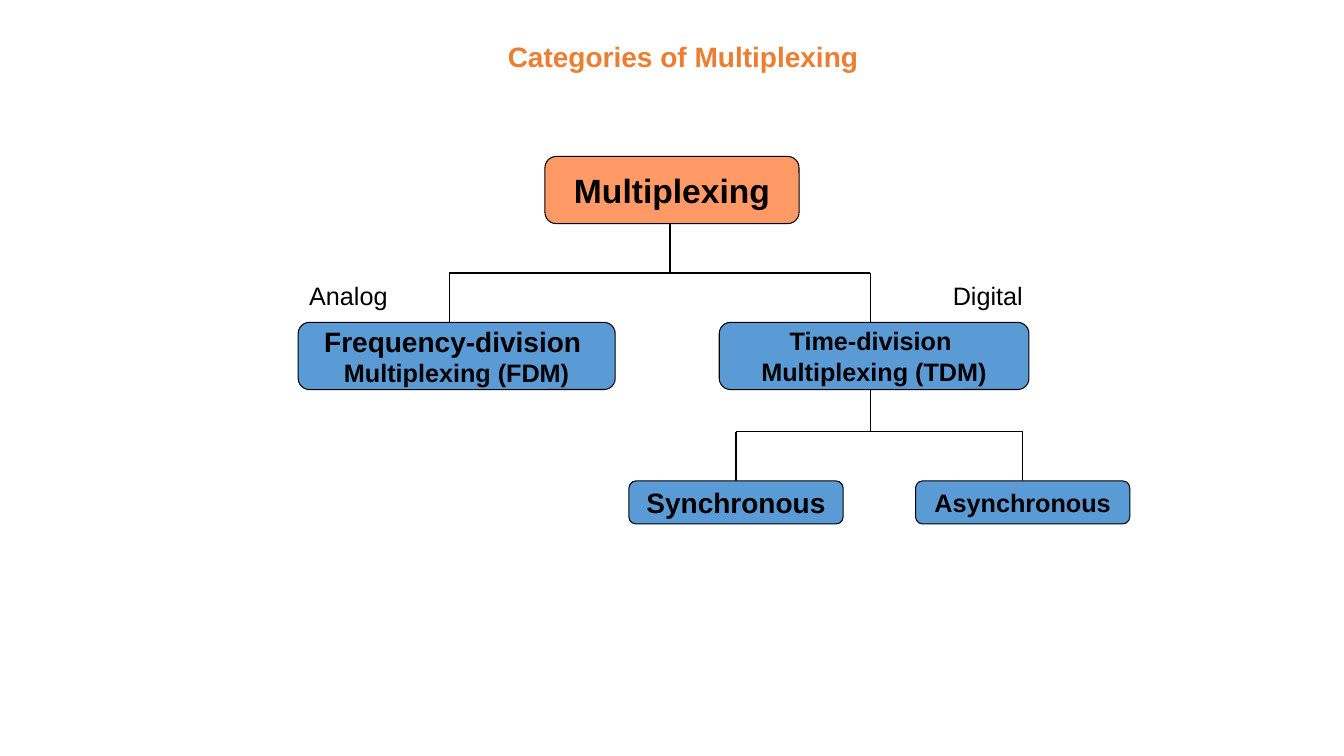
from pptx import Presentation
from pptx.dml.color import RGBColor
from pptx.enum.shapes import MSO_CONNECTOR as Connector, MSO_SHAPE as Preset
from pptx.enum.text import MSO_ANCHOR as Anchor, MSO_AUTO_SIZE as AutoSize, PP_ALIGN as Align
from pptx.oxml.ns import qn
from pptx.util import Pt
from lxml import etree

EMU_PER_PX = 9525
BLACK, ORANGE, SALMON, BLUE = "000000", "ED7D31", "FF9966", "5B9BD5"
TOP, BOTTOM = 0, 2


def px(length):
    return length * EMU_PER_PX


def color(value):
    return RGBColor.from_string(value)


def set_all(target, values):
    for name, value in values.items():
        setattr(target, name, value)


def write(shape, lines, font_color=BLACK, bold=True, align=Align.CENTER,
          anchor=Anchor.MIDDLE, wrap=False):
    frame = shape.text_frame
    set_all(frame, {"word_wrap": wrap, "auto_size": AutoSize.NONE,
                    "vertical_anchor": anchor})
    for index, (text, size) in enumerate(lines):
        paragraph = frame.add_paragraph() if index else frame.paragraphs[0]
        paragraph.alignment = align
        run = paragraph.add_run()
        run.text = text
        set_all(run.font, {"name": "Arial", "size": Pt(size), "bold": bold})
        run.font.color.rgb = color(font_color)


def add_title(slide, box, text):
    title = slide.shapes.title
    set_all(title, dict(zip(("left", "top", "width", "height"), map(px, box))))
    write(title, [(text, 20)], ORANGE, align=Align.LEFT, anchor=Anchor.TOP)


def add_label(slide, box, text):
    label = slide.shapes.add_textbox(*map(px, box))
    write(label, [(text, 18)], bold=False, align=Align.LEFT,
          anchor=Anchor.TOP, wrap=True)


def add_node(slide, box, fill, lines):
    node = slide.shapes.add_shape(Preset.FLOWCHART_ALTERNATE_PROCESS, *map(px, box))
    node.shadow.inherit = False
    node.fill.solid()
    node.fill.fore_color.rgb = color(fill)
    node.line.color.rgb = color(BLACK)
    node.line.width = Pt(0.75)
    write(node, lines)
    return node


def add_line(slide, start, end):
    line = slide.shapes.add_connector(Connector.STRAIGHT, *start, *end)
    line.line.color.rgb = color(BLACK)
    line.line.width = Pt(1)
    etree.SubElement(line._element.spPr, qn("a:effectLst"))
    return line


def center_x(node):
    return node.left + node.width // 2


def add_branch(slide, parent, stem_x, bar_y, drops):
    add_line(slide, (stem_x, parent.top + parent.height), (stem_x, bar_y))
    add_line(slide, (drops[0][1], bar_y), (drops[-1][1], bar_y))
    for child, drop_x in drops:
        line = add_line(slide, (drop_x, child.top), (drop_x, bar_y))
        if drop_x == center_x(child):
            line.begin_connect(child, TOP)


def add_tree(slide, box):
    left, top = box

    def node(x, y, width, height, fill, *lines):
        return add_node(slide, (left + x, top + y, width, height), fill, lines)

    root = node(235, 0, 242, 64, SALMON, ("Multiplexing", 24))
    frequency = node(0, 158, 302, 64, BLUE,
                     ("Frequency-division ", 20), ("Multiplexing (FDM)", 18))
    time = node(401, 158, 295, 64, BLUE,
                ("Time-division ", 18), ("Multiplexing (TDM)", 18))
    synchronous = node(315, 309, 204, 41, BLUE, ("Synchronous", 20))
    asynchronous = node(588, 309, 204, 41, BLUE, ("Asynchronous", 18))

    frequency_x, root_x, time_x = (px(left + x) for x in (144, 354, 545))
    add_branch(slide, root, root_x, px(top + 111),
               [(frequency, frequency_x), (time, time_x)])
    add_branch(slide, time, time_x, px(top + 262),
               [(child, center_x(child)) for child in (synchronous, asynchronous)])

    for x, text in ((1, "Analog"), (614, "Digital")):
        add_label(slide, (left + x, top + 113, 121, 38), text)


def main():
    presentation = Presentation()
    set_all(presentation, {"slide_width": px(1280), "slide_height": px(720)})
    slide = presentation.slides.add_slide(presentation.slide_layouts[5])
    add_title(slide, (474, 33, 360, 41), "Categories of Multiplexing")
    add_tree(slide, (284, 149))
    presentation.save("out.pptx")


if __name__ == "__main__":
    main()
